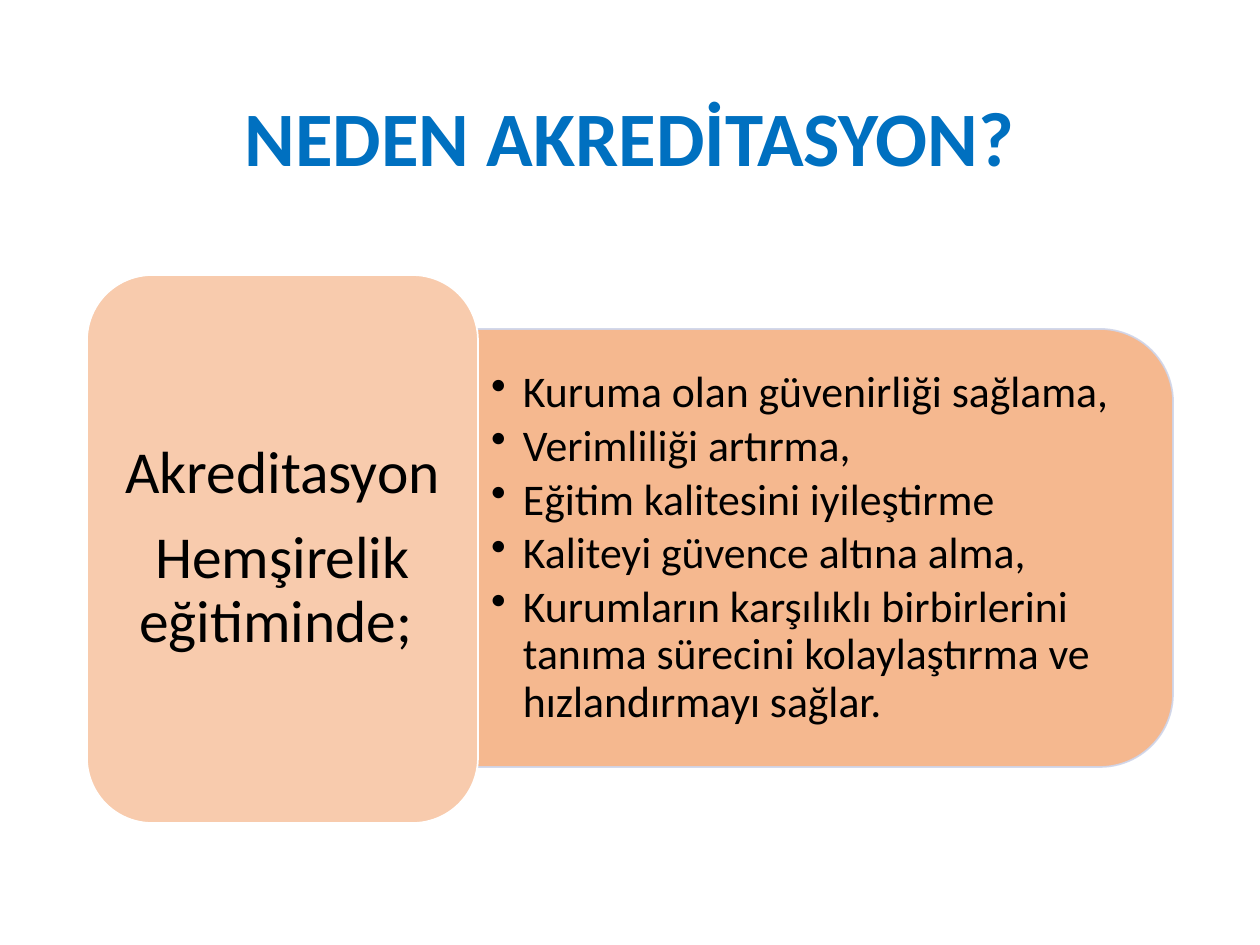
"""Build a slide on the reasons for accreditation in nursing education."""
import pptx
import pptx.dml.color
import pptx.enum.shapes
import pptx.enum.text
import pptx.oxml
import pptx.oxml.ns
import pptx.util

RGB = pptx.dml.color.RGBColor
BLUE = RGB(0x00, 0x70, 0xC0)
BLACK = RGB(0x00, 0x00, 0x00)
WHITE = RGB(0xFF, 0xFF, 0xFF)
PEACH = RGB(0xF8, 0xCB, 0xAD)
ORANGE = RGB(0xF4, 0xB1, 0x83)
PALE = RGB(0xCF, 0xD5, 0xEA)

SCALE = 914400 / 126
FONT = "Calibri"
NS = pptx.oxml.ns.nsdecls("a")
KIND = pptx.enum.shapes.MSO_SHAPE
ALIGN = pptx.enum.text.PP_ALIGN

TITLE = "NEDEN AKREDİTASYON?"
TOPIC = ["Akreditasyon ", "Hemşirelik eğitiminde; "]
GOALS = [
    "Kuruma olan güvenirliği sağlama,",
    "Verimliliği artırma,",
    "Eğitim kalitesini iyileştirme",
    "Kaliteyi güvence altına alma,",
    "Kurumların karşılıklı birbirlerini tanıma sürecini "
    "kolaylaştırma ve hızlandırmayı sağlar.",
]


def px(num):
    """Turn pixels into EMU."""
    return pptx.util.Emu(round(num * SCALE))


def fade(fill, share):
    """Set the opacity of a solid fill, in percent."""
    tone = fill._xPr.find(".//" + pptx.oxml.ns.qn("a:srgbClr"))
    tone.append(pptx.oxml.parse_xml(f'<a:alpha {NS} val="{share * 1000}"/>'))


def add_card(slide, kind, box, fill, line, turn=0, share=100):
    """Add a filled shape with a thin outline."""
    card = slide.shapes.add_shape(kind, *map(px, box))
    card.rotation = turn
    card.shadow.inherit = False
    card.line.width = pptx.util.Pt(1)
    for part, tone in ((card.fill, fill), (card.line.fill, line)):
        part.solid()
        part.fore_color.rgb = tone
        if share < 100:
            fade(part, share)


def add_dot(para):
    """Give a paragraph a hanging round bullet."""
    props = para._p.get_or_add_pPr()
    props.set("marL", str(px(32)))
    props.set("indent", str(px(-32)))
    props.append(pptx.oxml.parse_xml(f'<a:buChar {NS} char="•"/>'))


def add_text(slide, box, lines, size, tone=BLACK, bold=False, gap=0,
             pad=(13, 6), dots=False):
    """Add a text box centred on its middle line."""
    frame = slide.shapes.add_textbox(*map(px, box)).text_frame
    frame.word_wrap = True
    frame.vertical_anchor = pptx.enum.text.MSO_ANCHOR.MIDDLE
    frame.margin_left = frame.margin_right = px(pad[0])
    frame.margin_top = frame.margin_bottom = px(pad[1])
    for num, words in enumerate(lines):
        para = frame.add_paragraph() if num else frame.paragraphs[0]
        para.alignment = ALIGN.LEFT if dots else ALIGN.CENTER
        para.line_spacing = 0.9
        para.space_after = pptx.util.Pt(size * gap)
        if dots:
            add_dot(para)
        run = para.add_run()
        run.text = words
        run.font.name = FONT
        run.font.size = pptx.util.Pt(size)
        run.font.bold = bold
        run.font.color.rgb = tone


def main():
    """Build and save the slide."""
    deck = pptx.Presentation()
    deck.slide_width, deck.slide_height = px(1260), px(945)
    slide = deck.slides.add_slide(deck.slide_layouts[6])
    add_text(slide, (87, 50, 1086, 183), [TITLE], 44, BLUE, bold=True)
    add_card(slide, KIND.ROUND_2_SAME_RECTANGLE, (606, 200, 438, 696),
             ORANGE, PALE, turn=90, share=90)
    add_text(slide, (478, 350, 674, 396), GOALS, 25, gap=0.15, dots=True)
    add_card(slide, KIND.ROUNDED_RECTANGLE, (87, 275, 391, 548), PEACH, WHITE)
    add_text(slide, (106, 294, 353, 510), TOPIC, 34, gap=0.35, pad=(18, 9))
    deck.save("out.pptx")


if __name__ == "__main__":
    main()
